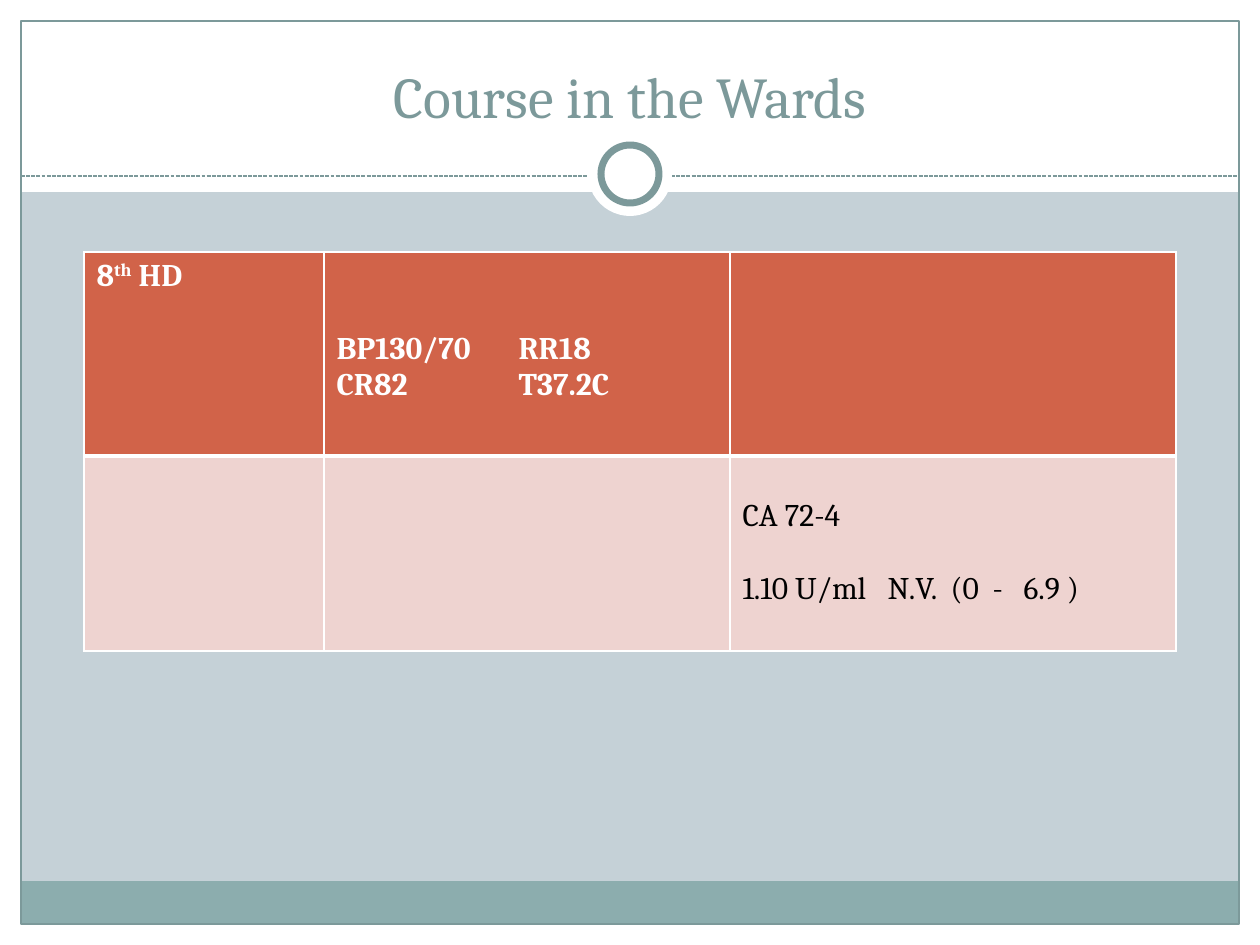
from dataclasses import dataclass

from lxml.etree import SubElement
from pptx import Presentation
from pptx.dml.color import RGBColor
from pptx.enum.dml import MSO_LINE
from pptx.enum.shapes import MSO_CONNECTOR, MSO_SHAPE
from pptx.enum.text import MSO_ANCHOR, MSO_AUTO_SIZE, PP_ALIGN
from pptx.oxml.ns import qn
from pptx.util import Emu, Pt

FONT = "Cambria"
WHITE, BLACK, TEAL = "FFFFFF", "000000", "7C999A"
BACKDROP, FOOTER = "C5D1D7", "8CADAE"
HEADER, BODY = "D16349", "EED3D0"
WIDTH, HEIGHT, EDGE = 1260, 945, 21


@dataclass
class Panel:
    left: int
    top: int
    width: int
    height: int
    fill: str | None = WHITE
    line: str | None = None
    weight: float = 0.75
    kind: MSO_SHAPE = MSO_SHAPE.RECTANGLE


@dataclass
class Entry:
    """Text of one table cell; each line is a list of (text, baseline) runs."""
    lines: list
    margin_top: int = 6
    gap: int = 0  # points between lines
    tabs: tuple = ()


PANELS = [
    Panel(0, 924, WIDTH, EDGE),
    Panel(0, 0, WIDTH, 192),
    Panel(0, 0, EDGE, HEIGHT),
    Panel(WIDTH - EDGE, 0, EDGE, HEIGHT),
    Panel(EDGE, 881, WIDTH - 2 * EDGE, 43, FOOTER),
    Panel(EDGE, EDGE, WIDTH - 2 * EDGE, 903, None, TEAL),
]
RINGS = [
    Panel(588, 132, 84, 84, kind=MSO_SHAPE.OVAL),
    Panel(601, 145, 58, 58, line=TEAL, weight=4, kind=MSO_SHAPE.OVAL),
]
COLUMNS, ROWS = (240, 406, 446), (204, 195)
ENTRIES = {
    (0, 0): Entry([[("8", 0), ("th", 30), (" HD", 0)]]),
    (0, 1): Entry([[("BP130/70\tRR18", 0)], [("CR82\tT37.2C", 0)]],
                  margin_top=79, tabs=(182,)),
    (1, 2): Entry([[("CA 72-4", 0)], [("1.10 U/ml\tN.V.\t(0\t-\t6.9 )", 0)]],
                  margin_top=42, gap=21, tabs=(145, 208, 250, 281)),
}


def px(length: int) -> Emu:
    return Emu(round(length * 914400 / 126))


def rgb(value: str) -> RGBColor:
    return RGBColor.from_string(value)


def draw_panel(slide, panel: Panel) -> None:
    shape = slide.shapes.add_shape(
        panel.kind, px(panel.left), px(panel.top), px(panel.width), px(panel.height))
    shape.shadow.inherit = False
    if panel.fill:
        shape.fill.solid()
        shape.fill.fore_color.rgb = rgb(panel.fill)
    else:
        shape.fill.background()
    if panel.line:
        shape.line.color.rgb = rgb(panel.line)
        shape.line.width = Pt(panel.weight)
    else:
        shape.line.fill.background()


def draw_divider(slide, y: int) -> None:
    divider = slide.shapes.add_connector(
        MSO_CONNECTOR.STRAIGHT, px(EDGE), px(y), px(WIDTH - EDGE), px(y))
    divider.line.color.rgb = rgb(TEAL)
    divider.line.width = Pt(0.75)
    divider.line.dash_style = MSO_LINE.SQUARE_DOT
    SubElement(divider.element.spPr, qn("a:effectLst"))


def set_title(slide, text: str) -> None:
    title = slide.shapes.title
    title.left, title.top, title.width, title.height = map(px, (42, 32, 1176, 104))
    frame = title.text_frame
    frame.text = text
    frame.auto_size = MSO_AUTO_SIZE.NONE
    frame.vertical_anchor = MSO_ANCHOR.BOTTOM
    heading = frame.paragraphs[0]
    heading.alignment = PP_ALIGN.CENTER
    set_font(heading, 33, TEAL, False)
    # Bring the title in front of the white band
    title.element.getparent().append(title.element)


def set_font(paragraph, size: float, color: str, bold: bool) -> None:
    font = paragraph.font
    font.name, font.size, font.bold = FONT, Pt(size), bold
    font.color.rgb = rgb(color)


def set_border(cell, side: str, weight: float) -> None:
    line = SubElement(cell._tc.get_or_add_tcPr(), qn(f"a:ln{side}"), w=str(Pt(weight)))
    fill = SubElement(line, qn("a:solidFill"))
    SubElement(fill, qn("a:srgbClr"), val=WHITE)


def write_entry(cell, entry: Entry, color: str, bold: bool) -> None:
    cell.margin_top = px(entry.margin_top)
    frame = cell.text_frame
    for index, runs in enumerate(entry.lines):
        paragraph = frame.add_paragraph() if index else frame.paragraphs[0]
        if index:
            paragraph.space_before = Pt(entry.gap)
        if entry.tabs:
            stops = SubElement(paragraph._p.get_or_add_pPr(), qn("a:tabLst"))
            for stop in entry.tabs:
                SubElement(stops, qn("a:tab"), pos=str(px(stop)), algn="l")
        set_font(paragraph, 18, color, bold)
        for text, baseline in runs:
            run = paragraph.add_run()
            run.text = text
            if baseline:
                run._r.get_or_add_rPr().set("baseline", str(baseline * 1000))


def draw_table(slide) -> None:
    table = slide.shapes.add_table(
        len(ROWS), len(COLUMNS), px(84), px(252), px(sum(COLUMNS)), px(sum(ROWS))).table
    for column, width in zip(table.columns, COLUMNS):
        column.width = px(width)
    for r, height in enumerate(ROWS):
        table.rows[r].height = px(height)
        is_header = r == 0
        for c in range(len(COLUMNS)):
            cell = table.cell(r, c)
            # The rule under the header is heavier than the others
            for side in "LRTB":
                heavy = side == ("B" if is_header else "T")
                set_border(cell, side, 3 if heavy else 1)
            cell.fill.solid()
            cell.fill.fore_color.rgb = rgb(HEADER if is_header else BODY)
            if (r, c) in ENTRIES:
                write_entry(cell, ENTRIES[r, c], WHITE if is_header else BLACK, is_header)


def main() -> None:
    deck = Presentation()
    deck.slide_width, deck.slide_height = px(WIDTH), px(HEIGHT)
    slide = deck.slides.add_slide(deck.slide_layouts[5])
    slide.background.fill.solid()
    slide.background.fill.fore_color.rgb = rgb(BACKDROP)

    # Frame, divider and ring
    for panel in PANELS:
        draw_panel(slide, panel)
    draw_divider(slide, 176)
    for ring in RINGS:
        draw_panel(slide, ring)

    # Content
    set_title(slide, "Course in the Wards")
    draw_table(slide)
    deck.save("out.pptx")


if __name__ == "__main__":
    main()
